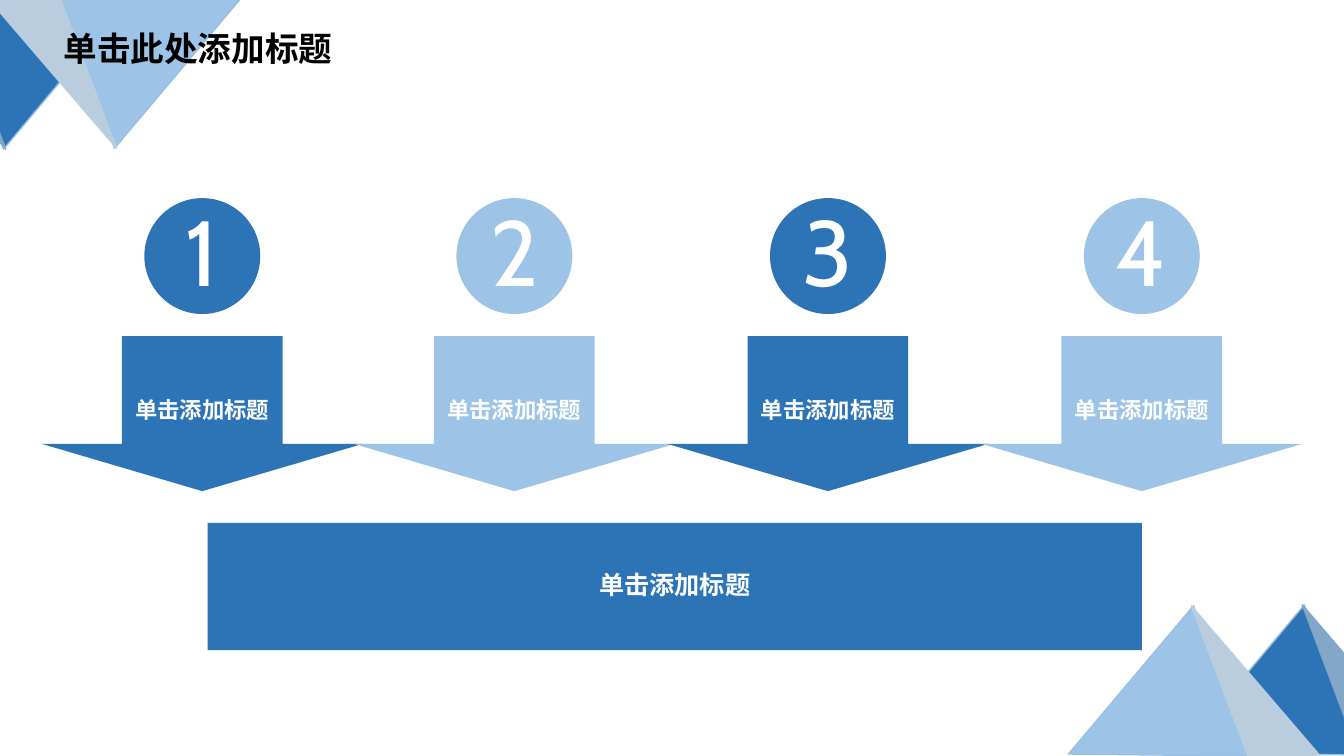
from pptx import Presentation
from pptx.dml.color import RGBColor
from pptx.enum.shapes import MSO_SHAPE
from pptx.enum.text import MSO_ANCHOR, MSO_AUTO_SIZE, PP_ALIGN
from pptx.util import Pt

# Content
TITLE = "单击此处添加标题"
STEPS = [  # number, label, centre x, colour
    ("1", "单击添加标题", 144.5, "blue"),
    ("2", "单击添加标题", 367.4, "sky"),
    ("3", "单击添加标题", 591.4, "blue"),
    ("4", "单击添加标题", 815.6, "sky"),
]
SUMMARY = "单击添加标题"

COLORS = {
    "blue": "2D74B6", "sky": "9DC3E6", "steel": "83A7C8", "mist": "BACDDE",
    "sky_edge": "99C0E4", "steel_edge": "83A6C7", "mist_edge": "BBCEDF",
    "white": "FFFFFF", "black": "000000",
}
CJK_FONT = "Noto Sans CJK SC"
NUMBER_FONT = "Cabin"

# Mountain faces in the bottom right corner: fill, edge, corners
FACES = [
    ("blue", "sky_edge", [(843.1, 537.8), (931.7, 432), (970.6, 539.3)]),
    ("steel", "steel_edge", [(970.6, 539.3), (930.2, 432), (1021.7, 538.6)]),
    ("sky", "sky_edge", [(763.2, 538.6), (852.5, 432.7), (891.4, 540)]),
    ("mist", "mist_edge", [(891.4, 540), (851, 432.7), (942.5, 539.3)]),
]
TURN_X, TURN_Y = 934.3, 538.6  # sums of coordinates under the half turn

# Layout
CIRCLE_TOP, CIRCLE_SIZE = 141.5, 82.8
NUMBER_BOX = (157, 64, 51.8)  # top, width, height
LABEL_WIDTH, LABEL_HEIGHT, LABEL_TOP = 151.2, 34.6, 276.5
ARROW_TOP, ARROW_NECK, ARROW_TIP = 240, 317, 350.8
ARROW_HALF, STEM_HALF = 114.8, 57.4
BAR = (148.3, 373.4, 667.4, 90.9)


def color(name):
    return RGBColor.from_string(COLORS[name])


def paint(shape, fill, edge=None):
    shape.shadow.inherit = False
    shape.fill.solid()
    shape.fill.fore_color.rgb = color(fill)
    if edge:
        shape.line.color.rgb = color(edge)
        shape.line.width = Pt(1)
    else:
        shape.line.fill.background()


def add_polygon(slide, points, fill, edge=None):
    corners = [(Pt(x), Pt(y)) for x, y in points]
    builder = slide.shapes.build_freeform(*corners[0])
    builder.add_line_segments(corners[1:], close=True)
    paint(builder.convert_to_shape(), fill, edge)


def add_preset(slide, kind, box, fill):
    paint(slide.shapes.add_shape(kind, *map(Pt, box)), fill)


def write(shape, text, size, font=CJK_FONT, ink="white", bold=True):
    paragraph = shape.text_frame.paragraphs[0]
    paragraph.alignment = PP_ALIGN.CENTER
    run = paragraph.add_run()
    run.text = text
    run.font.size = Pt(size)
    run.font.bold = bold
    run.font.name = font
    run.font.color.rgb = color(ink)
    properties = run.font.color and run._r.get_or_add_rPr()
    east_asian = properties.makeelement(
        "{http://schemas.openxmlformats.org/drawingml/2006/main}ea", {"typeface": font})
    properties.find("{*}latin").addnext(east_asian)
    return paragraph


def add_text(slide, center, top, width, height, text, **style):
    box = slide.shapes.add_textbox(Pt(center - width / 2), Pt(top), Pt(width), Pt(height))
    frame = box.text_frame
    frame.word_wrap = True
    frame.vertical_anchor = MSO_ANCHOR.MIDDLE
    frame.margin_left = frame.margin_right = frame.margin_top = frame.margin_bottom = 0
    paragraph = write(box, text, **style)
    paragraph.line_spacing = 0.9
    paragraph.space_before = Pt(10)


def add_mountains(slide):
    for fill, edge, points in FACES:
        add_polygon(slide, points, fill, edge)
    for fill, edge, points in FACES:
        add_polygon(slide, [(TURN_X - x, TURN_Y - y) for x, y in points], fill, edge)


def add_title(slide):
    title = slide.shapes.title
    title.left, title.top, title.width, title.height = map(Pt, (37.4, 16.6, 208.1, 36))
    frame = title.text_frame
    frame.word_wrap = False
    frame.auto_size = MSO_AUTO_SIZE.SHAPE_TO_FIT_TEXT
    frame.vertical_anchor = MSO_ANCHOR.TOP
    write(title, TITLE, size=24, ink="black")
    title.element.getparent().append(title.element)  # in front of the mountains


def add_step(slide, number, label, center, fill):
    circle = (center - CIRCLE_SIZE / 2, CIRCLE_TOP, CIRCLE_SIZE, CIRCLE_SIZE)
    add_preset(slide, MSO_SHAPE.OVAL, circle, fill)
    outline = [
        (STEM_HALF, ARROW_TOP), (STEM_HALF, ARROW_NECK), (ARROW_HALF, ARROW_NECK),
        (0, ARROW_TIP),
        (-ARROW_HALF, ARROW_NECK), (-STEM_HALF, ARROW_NECK), (-STEM_HALF, ARROW_TOP),
    ]
    add_polygon(slide, [(center + x, y) for x, y in outline], fill)
    add_text(slide, center, *NUMBER_BOX, number, size=66, font=NUMBER_FONT, bold=False)
    add_text(slide, center, LABEL_TOP, LABEL_WIDTH, LABEL_HEIGHT, label, size=16)


def main():
    presentation = Presentation()
    presentation.slide_width, presentation.slide_height = Pt(960), Pt(540)
    slide = presentation.slides.add_slide(presentation.slide_layouts[5])

    add_mountains(slide)
    add_title(slide)
    for step in STEPS:
        add_step(slide, *step)

    # Summary bar
    add_preset(slide, MSO_SHAPE.RECTANGLE, BAR, "blue")
    left, top, width, height = BAR
    add_text(slide, left + width / 2, top + (height - LABEL_HEIGHT) / 2,
             LABEL_WIDTH, LABEL_HEIGHT, SUMMARY, size=18)

    presentation.save("out.pptx")


if __name__ == "__main__":
    main()
